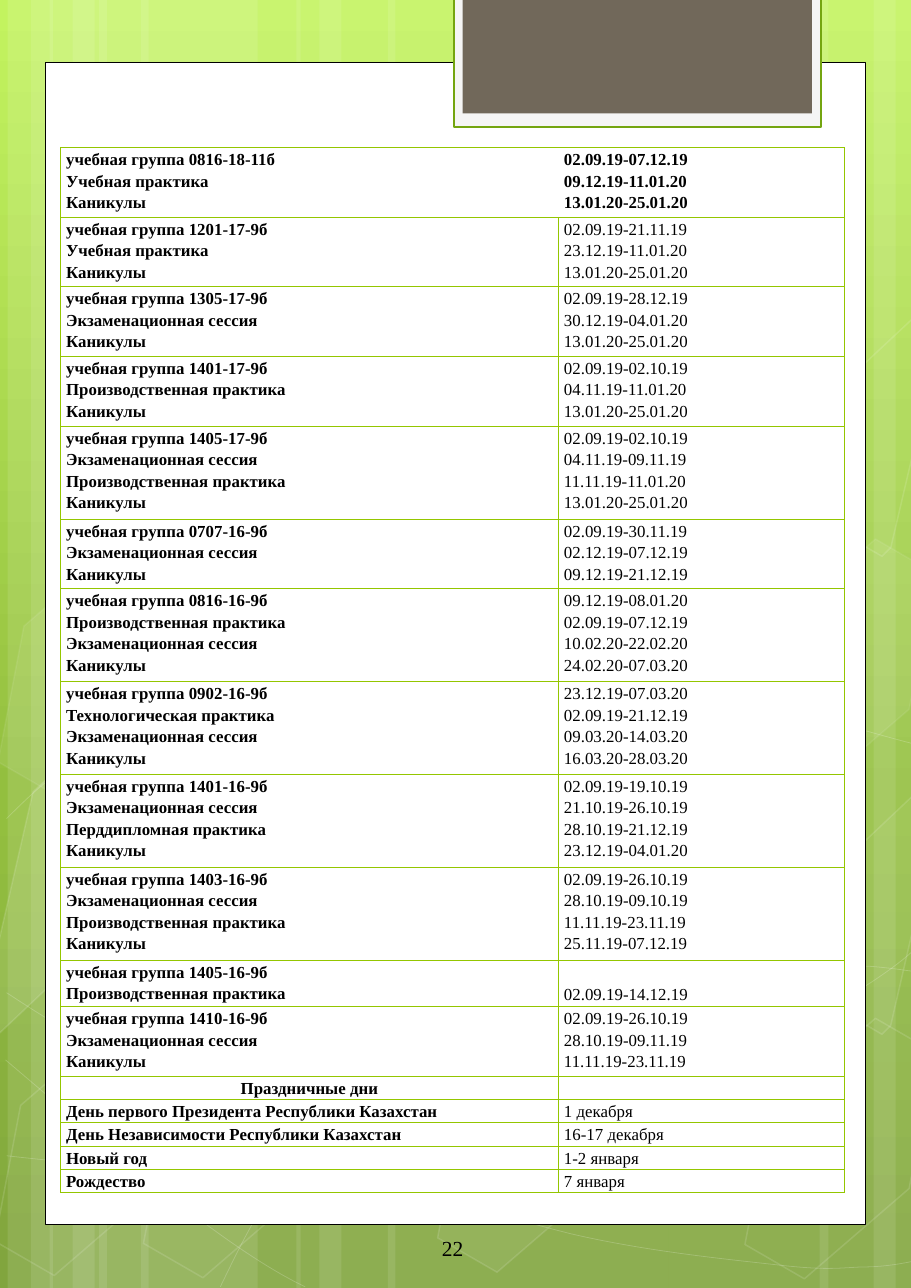
"""Build the study schedule page with its calendar table and green backdrop."""
from copy import deepcopy
from dataclasses import dataclass
from math import cos, radians, sin
from typing import Any, Optional

from lxml.etree import SubElement
from pptx import Presentation
from pptx.dml.color import RGBColor
from pptx.enum.shapes import MSO_SHAPE
from pptx.enum.text import PP_ALIGN
from pptx.oxml.ns import qn
from pptx.util import Pt

EMU_PER_PX = 9144
PAGE_WIDTH, PAGE_HEIGHT = 827, 1169
TEXT_LINE = 20
TILT = 30
COLORS = {
    "white": "FFFFFF", "black": "000000", "border": "94C600", "frame": "F5F5F5",
    "frame_line": "74A510", "plate": "71685A",
    "top": "C3F35F", "middle": "93BF3F", "bottom": "81A53E",
}
FONT = {"name": "Times New Roman", "size": Pt(11)}
CELL = {"margin_left": 5 * EMU_PER_PX, "margin_right": 5 * EMU_PER_PX, "margin_bottom": 0}
Point = tuple[float, float]


@dataclass(frozen=True)
class Style:
    fill: Optional[str] = None
    fill_alpha: int = 100
    line: Optional[str] = None
    line_width: float = 1
    line_alpha: int = 100


@dataclass(frozen=True)
class Block:
    left: int
    top: int
    width: int
    height: int
    style: Style
    preset: MSO_SHAPE = MSO_SHAPE.RECTANGLE
    rotation: int = 0


@dataclass(frozen=True)
class CutHexagon:
    center: Point
    points: list[Point]
    style: Style


@dataclass(frozen=True)
class Entry:
    labels: tuple[str, ...]
    dates: tuple[str, ...] = ()
    bold_dates: bool = False
    centered: bool = False


def glass(fill_alpha: int, line_alpha: int = 12) -> Style:
    return Style("white" if fill_alpha else None, fill_alpha, "white", 1, line_alpha)


def hexagon(left: int, top: int, style: Style) -> Block:
    return Block(left, top, 145, 237, style, MSO_SHAPE.HEXAGON, TILT)


def group(number: str, activities: tuple[str, ...], *dates: str, bold: bool = False) -> Entry:
    return Entry((f"учебная группа {number}б", *activities), dates, bold)


STRIP = Style("white", 10)
STRIPS = [(90, 144), (7, 41), (28, 69), (128, 145), (45, 41), (66, 69),
          (607, 145), (793, 41), (744, 69), (352, 255), (269, 41), (290, 69)]
CURVE = Style(line="white", line_width=0.5, line_alpha=20)
CURVES: list[list[Point]] = [
    [(6, 1049), (51, 1054), (95, 1059), (157, 1057), (219, 1055), (296, 1053), (379, 1037),
     (461, 1021), (579, 992), (655, 962), (730, 932), (808, 885), (833, 859)],
    [(6, 743), (30, 719), (54, 696), (100, 672), (147, 649), (214, 615), (287, 603),
     (361, 592), (450, 591), (541, 603), (632, 616), (783, 664), (833, 676)],
    [(5, 962), (105, 1047), (204, 1133), (277, 1168)],
    [(6, 901), (32, 918), (58, 935), (106, 960), (154, 984), (226, 1022), (295, 1049),
     (364, 1076), (451, 1103), (519, 1120), (588, 1136), (661, 1143), (705, 1148),
     (749, 1153), (760, 1151), (781, 1150), (803, 1150), (818, 1147), (833, 1144)],
    [(200, 1168), (215, 1137), (230, 1106), (250, 1077), (270, 1049), (298, 1018), (321, 996),
     (344, 975), (358, 966), (388, 950), (419, 934), (474, 912), (503, 901),
     (532, 891), (537, 891), (562, 887), (588, 883), (628, 879), (657, 877),
     (685, 875), (733, 877), (733, 877), (751, 877), (770, 877), (788, 877),
     (803, 878), (817, 880), (824, 881), (832, 882), (829, 882), (832, 883)],
]
HEXAGONS = [hexagon(411, 918, glass(6)), hexagon(9, 921, glass(0)),
            hexagon(12, 486, glass(7, 8)), hexagon(144, 923, glass(0)),
            hexagon(690, 924, glass(0)), hexagon(690, 489, glass(7, 8))]
CUT_HEXAGONS = [
    CutHexagon((29, 834.5), [(30, 719), (44, 706), (107, 743), (79, 863), (-11, 948),
                             (-21, 942)], glass(10)),
    CutHexagon((814, 810.5), [(766, 782), (856, 697), (862, 701), (809, 931), (801, 939),
                              (738, 902)], glass(4)),
    CutHexagon((814, 376.5), [(766, 348), (856, 264), (863, 267), (809, 497), (801, 505),
                              (738, 469)], glass(0)),
]
PANELS = [
    Block(41, 57, 745, 1054, Style("white", line="black", line_width=0.5)),
    Block(412, -4, 333, 119, Style("frame", line="frame_line", line_width=1.25)),
    Block(420, -4, 317, 107, Style("plate")),
]
BREAK = "Каникулы"
EXAMS = "Экзаменационная сессия"
STUDY = "Учебная практика"
WORK = "Производственная практика"
ENTRIES = [
    group("0816-18-11", (STUDY, BREAK), "02.09.19-07.12.19", "09.12.19-11.01.20",
          "13.01.20-25.01.20", bold=True),
    group("1201-17-9", (STUDY, BREAK), "02.09.19-21.11.19", "23.12.19-11.01.20",
          "13.01.20-25.01.20"),
    group("1305-17-9", (EXAMS, BREAK), "02.09.19-28.12.19", "30.12.19-04.01.20",
          "13.01.20-25.01.20"),
    group("1401-17-9", (WORK, BREAK), "02.09.19-02.10.19", "04.11.19-11.01.20",
          "13.01.20-25.01.20"),
    group("1405-17-9", (EXAMS, WORK, BREAK), "02.09.19-02.10.19", "04.11.19-09.11.19",
          "11.11.19-11.01.20", "13.01.20-25.01.20"),
    group("0707-16-9", (EXAMS, BREAK), "02.09.19-30.11.19", "02.12.19-07.12.19",
          "09.12.19-21.12.19"),
    group("0816-16-9", (WORK, EXAMS, BREAK), "09.12.19-08.01.20", "02.09.19-07.12.19",
          "10.02.20-22.02.20", "24.02.20-07.03.20"),
    group("0902-16-9", ("Технологическая практика", EXAMS, BREAK), "23.12.19-07.03.20",
          "02.09.19-21.12.19", "09.03.20-14.03.20", "16.03.20-28.03.20"),
    group("1401-16-9", (EXAMS, "Перддипломная практика", BREAK), "02.09.19-19.10.19",
          "21.10.19-26.10.19", "28.10.19-21.12.19", "23.12.19-04.01.20"),
    group("1403-16-9", (EXAMS, WORK, BREAK), "02.09.19-26.10.19", "28.10.19-09.10.19",
          "11.11.19-23.11.19", "25.11.19-07.12.19"),
    group("1405-16-9", (WORK,), "02.09.19-14.12.19"),
    group("1410-16-9", (EXAMS, BREAK), "02.09.19-26.10.19", "28.10.19-09.11.19",
          "11.11.19-23.11.19"),
    Entry(("Праздничные дни",), centered=True),
    Entry(("День первого Президента Республики Казахстан",), ("1 декабря",)),
    Entry(("День Независимости Республики Казахстан",), ("16-17 декабря",)),
    Entry(("Новый год",), ("1-2 января",)),
    Entry(("Рождество",), ("7 января",)),
]


def emu(*lengths: float) -> list[int]:
    return [round(length * EMU_PER_PX) for length in lengths]


def apply_format(target: Any, values: dict[str, Any]) -> None:
    for name, value in values.items():
        setattr(target, name, value)


def paint(fill: Any, color: Optional[str], alpha: int = 100) -> None:
    if color is None:
        fill.background()
        return
    fill.solid()
    fill.fore_color.rgb = RGBColor.from_string(COLORS[color])
    if alpha < 100:
        color_element = fill._xPr.find(qn("a:solidFill"))[0]
        SubElement(color_element, qn("a:alpha"), val=str(alpha * 1000))


def apply_style(shape: Any, style: Style) -> None:
    shape.shadow.inherit = False
    paint(shape.fill, style.fill, style.fill_alpha)
    if style.line:
        shape.line.width = Pt(style.line_width)
    paint(shape.line.fill, style.line, style.line_alpha)


def draw_block(slide: Any, block: Block) -> None:
    frame = emu(block.left, block.top, block.width, block.height)
    shape = slide.shapes.add_shape(block.preset, *frame)
    shape.rotation = block.rotation
    if block.preset == MSO_SHAPE.HEXAGON:
        shape.adjustments[0] = 0.285
    apply_style(shape, block.style)


def draw_outline(slide: Any, points: list[Point], style: Style, close: bool) -> Any:
    start, *rest = [tuple(emu(*point)) for point in points]
    builder = slide.shapes.build_freeform(*start)
    builder.add_line_segments(rest, close=close)
    shape = builder.convert_to_shape()
    apply_style(shape, style)
    return shape


def draw_curve(slide: Any, knots: list[Point]) -> None:
    shape = draw_outline(slide, knots, CURVE, close=False)
    segments = list(shape._element.iter(qn("a:lnTo")))
    outline = segments[0].getparent()
    for index in range(0, len(segments), 3):
        bezier = SubElement(outline, qn("a:cubicBezTo"))
        for segment in segments[index:index + 3]:
            bezier.append(segment[0])
            outline.remove(segment)


def draw_cut_hexagon(slide: Any, cut: CutHexagon) -> None:
    center_x, center_y = cut.center
    cosine, sine = cos(radians(TILT)), sin(radians(TILT))
    offsets = [(x - center_x, y - center_y) for x, y in cut.points]
    upright = [(center_x + x * cosine + y * sine, center_y + y * cosine - x * sine)
               for x, y in offsets]
    draw_outline(slide, upright, cut.style, close=True).rotation = TILT


def write_lines(text_frame: Any, lines: tuple[str, ...], font: dict[str, Any],
                layout: dict[str, Any]) -> None:
    for index, line in enumerate(lines):
        paragraph = text_frame.add_paragraph() if index else text_frame.paragraphs[0]
        apply_format(paragraph, layout)
        run = paragraph.add_run()
        run.text = line
        apply_format(run.font, FONT | font)
        run.font.color.rgb = RGBColor.from_string(COLORS["black"])
    if not lines:
        SubElement(text_frame.paragraphs[0]._p, qn("a:endParaRPr"), sz="1100")


def draw_borders(cell: Any, sides: str) -> None:
    properties = cell._tc.get_or_add_tcPr()
    for side in "LRTB":
        line = SubElement(properties, qn(f"a:ln{side}"), w=str(Pt(0.75)))
        if side in sides:
            solid = SubElement(line, qn("a:solidFill"))
            SubElement(solid, qn("a:srgbClr"), val=COLORS["border"])
        else:
            SubElement(line, qn("a:noFill"))


def draw_schedule(slide: Any) -> None:
    left, top, width, height = emu(55, 134, 712, 948)
    table = slide.shapes.add_table(len(ENTRIES), 2, left, top, width, height).table
    apply_format(table, {"first_row": False, "horz_banding": False})
    for column, column_width in zip(table.columns, emu(452, 260)):
        column.width = column_width
    line_count = sum(len(entry.labels) for entry in ENTRIES)
    for index, entry in enumerate(ENTRIES):
        table.rows[index].height = height * len(entry.labels) // line_count
        texts = ((entry.labels, True), (entry.dates, entry.bold_dates))
        for column, (lines, bold) in enumerate(texts):
            cell = table.cell(index, column)
            skipped = len(entry.labels) - len(lines) if lines else 0
            apply_format(cell, CELL | {"margin_top": skipped * TEXT_LINE * EMU_PER_PX})
            draw_borders(cell, "LRTB" if index else ("LTB", "RTB")[column])
            cell.fill.background()
            centered = entry.centered and column == 0
            alignment = PP_ALIGN.CENTER if centered else PP_ALIGN.LEFT
            write_lines(cell.text_frame, lines, {"bold": bold},
                        {"line_spacing": 1.15, "alignment": alignment})


def draw_background(slide: Any) -> None:
    fill = slide.background.fill
    fill.gradient()
    fill.gradient_angle = 270
    stop_list = next(slide.element.iter(qn("a:gsLst")))
    stop_list.append(deepcopy(stop_list[0]))
    stops = (("top", 0), ("middle", 0.62), ("bottom", 1))
    for stop, (color, position) in zip(fill.gradient_stops, stops):
        stop.position = position
        stop.color.rgb = RGBColor.from_string(COLORS[color])


def main() -> None:
    presentation = Presentation()
    presentation.slide_width, presentation.slide_height = emu(PAGE_WIDTH, PAGE_HEIGHT)
    slide = presentation.slides.add_slide(presentation.slide_layouts[6])
    draw_background(slide)
    for left, width in STRIPS:
        draw_block(slide, Block(left, 0, width, PAGE_HEIGHT, STRIP))
    for knots in CURVES:
        draw_curve(slide, knots)
    for block in HEXAGONS:
        draw_block(slide, block)
    for cut in CUT_HEXAGONS:
        draw_cut_hexagon(slide, cut)
    for block in PANELS:
        draw_block(slide, block)
    page_number = slide.shapes.add_textbox(*emu(363, 1116, 96, 35))
    page_number.text_frame.word_wrap = True
    write_lines(page_number.text_frame, ("22",), {"size": Pt(14)},
                {"alignment": PP_ALIGN.CENTER})
    draw_schedule(slide)
    presentation.save("out.pptx")


if __name__ == "__main__":
    main()
